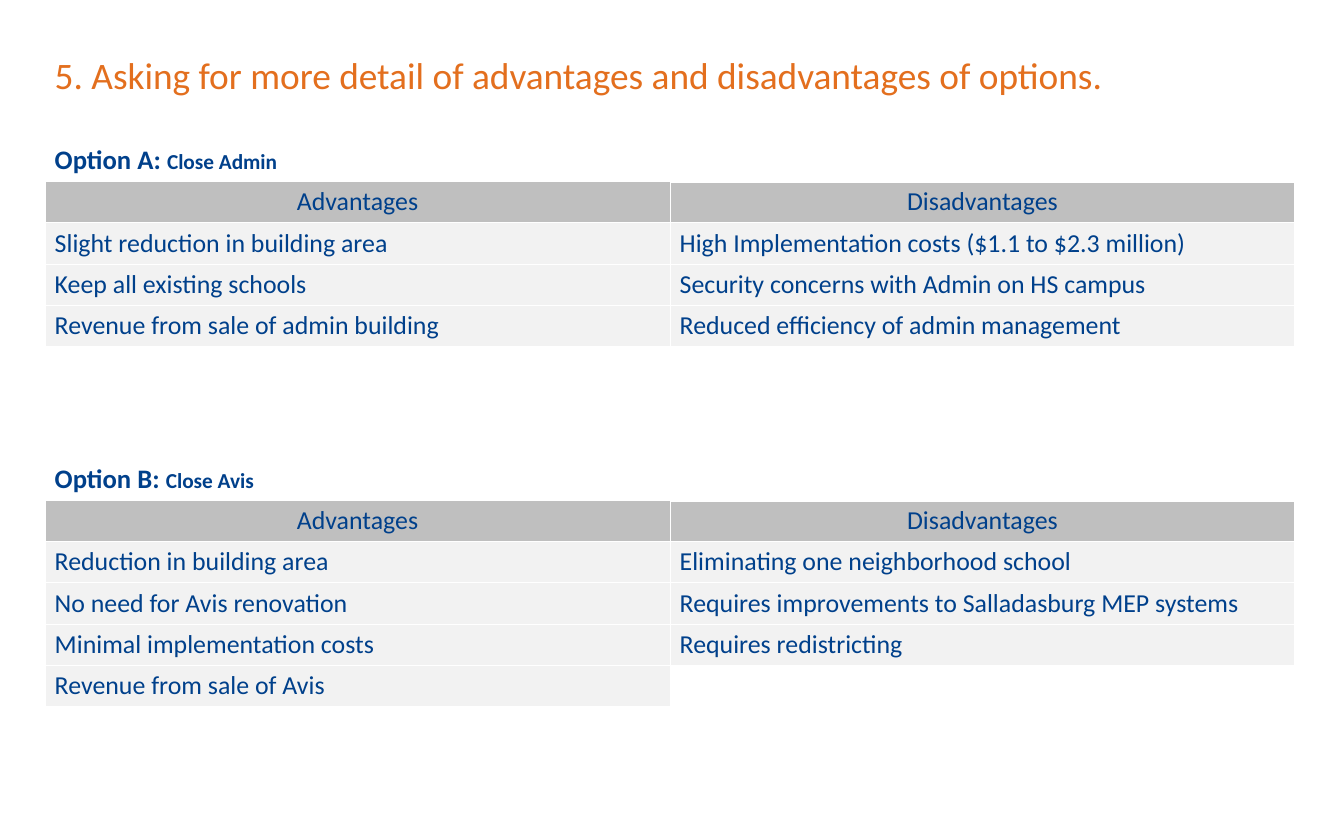
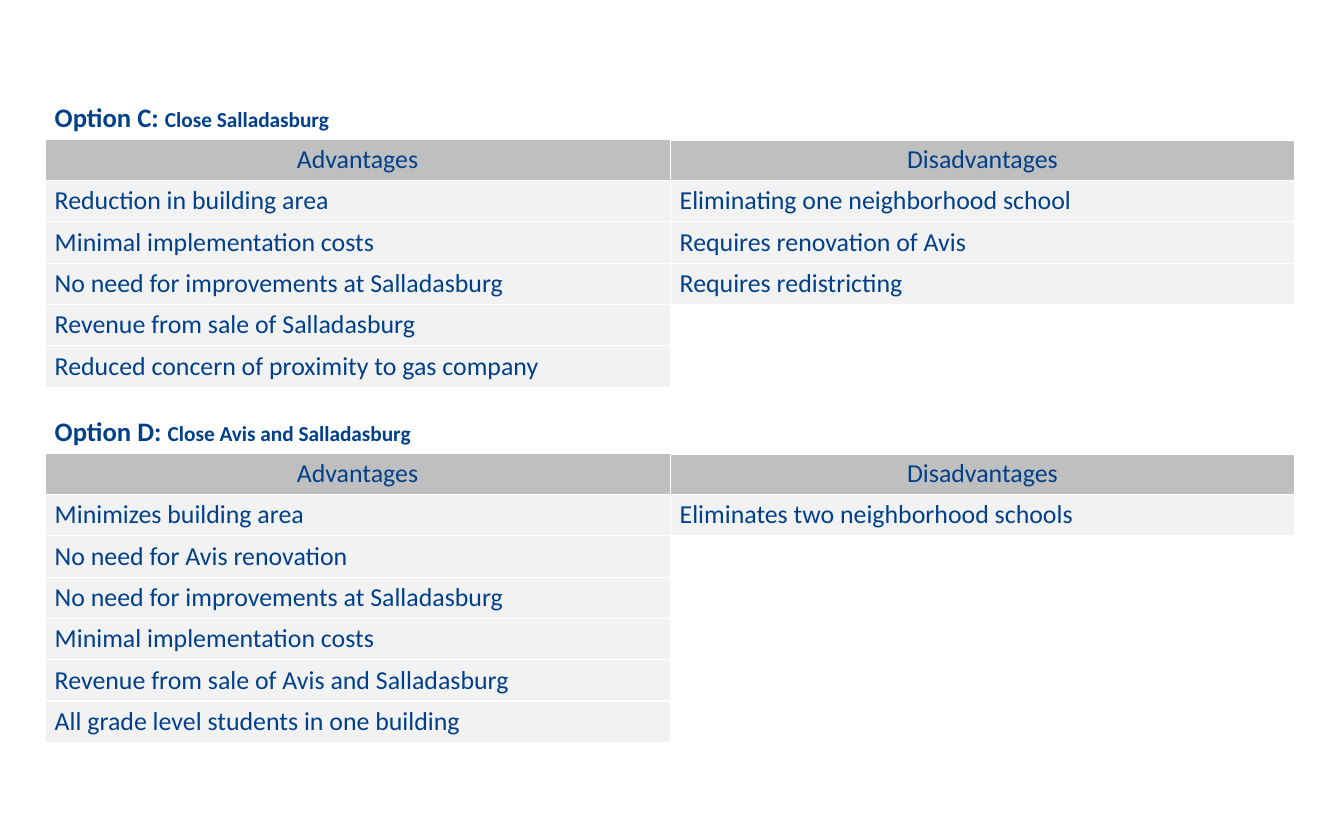
"""Build two slides of tables weighing the advantages and disadvantages of four options."""
from itertools import zip_longest

from lxml.etree import SubElement
from pptx import Presentation
from pptx.dml.color import RGBColor
from pptx.enum.text import MSO_ANCHOR, MSO_AUTO_SIZE, PP_ALIGN
from pptx.oxml.ns import qn
from pptx.util import Inches, Pt

ORANGE = RGBColor(0xE3, 0x6F, 0x1E)
BLUE = RGBColor(0x00, 0x40, 0x8B)
GRAY = RGBColor(0xBF, 0xBF, 0xBF)
PALE = RGBColor(0xF2, 0xF2, 0xF2)
WHITE = RGBColor(0xFF, 0xFF, 0xFF)
FONT = "Calibri"
LEFT, COL, ROW = 0.47, 6.51, 0.41
HEADS = ("Advantages", "Disadvantages")

SLIDES = [
    ("5. Asking for more detail of advantages and disadvantages of options.", [
        (1.45, "Option A: ", "Close Admin",
         ["Slight reduction in building area",
          "Keep all existing schools",
          "Revenue from sale of admin building"],
         ["High Implementation costs ($1.1 to $2.3 million)",
          "Security concerns with Admin on HS campus",
          "Reduced efficiency of admin management"]),
        (4.77, "Option B: ", "Close Avis",
         ["Reduction in building area",
          "No need for Avis renovation",
          "Minimal implementation costs",
          "Revenue from sale of Avis"],
         ["Eliminating one neighborhood school",
          "Requires improvements to Salladasburg MEP systems",
          "Requires redistricting"]),
    ]),
    (None, [
        (4.28, "Option D: ", "Close Avis and Salladasburg",
         ["Minimizes building area",
          "No need for Avis renovation",
          "No need for improvements at Salladasburg",
          "Minimal implementation costs",
          "Revenue from sale of Avis and Salladasburg",
          "All grade level students in one building"],
         ["Eliminates two neighborhood schools"]),
        (1.01, "Option C: ", "Close Salladasburg",
         ["Reduction in building area",
          "Minimal implementation costs",
          "No need for improvements at Salladasburg",
          "Revenue from sale of Salladasburg",
          "Reduced concern of proximity to gas company"],
         ["Eliminating one neighborhood school",
          "Requires renovation of Avis",
          "Requires redistricting"]),
    ]),
]


def style(font, size, color, bold=False):
    font.name = FONT
    font.size = Pt(size)
    font.color.rgb = color
    font.bold = bold


def border(cell, thick):
    props = cell._tc.get_or_add_tcPr()
    for side in ("lnL", "lnR", "lnT", "lnB"):
        width = Pt(3 if side == thick else 1)
        line = SubElement(props, qn(f"a:{side}"), w=str(width))
        fill = SubElement(line, qn("a:solidFill"))
        SubElement(fill, qn("a:srgbClr"), val=str(WHITE))


deck = Presentation()
deck.slide_width, deck.slide_height = Inches(14), Inches(8.5)

for heading, options in SLIDES:
    slide = deck.slides.add_slide(deck.slide_layouts[5 if heading else 6])
    if heading:
        title = slide.shapes.title
        title.left, title.top = Inches(LEFT), Inches(0.49)
        title.width, title.height = Inches(11.82), Inches(0.84)
        frame = title.text_frame
        frame.text = heading
        frame.word_wrap = True
        frame.auto_size = MSO_AUTO_SIZE.NONE
        frame.vertical_anchor = MSO_ANCHOR.TOP
        frame.paragraphs[0].alignment = PP_ALIGN.LEFT
        style(frame.paragraphs[0].runs[0].font, 28, ORANGE)

    for top, label, action, pros, cons in options:
        lines = [(None, None), HEADS, *zip_longest(pros, cons)]
        table = slide.shapes.add_table(
            len(lines), 2, Inches(LEFT), Inches(top),
            Inches(2 * COL), Inches(ROW * len(lines))).table
        for column in table.columns:
            column.width = Inches(COL)
        for r, line in enumerate(lines):
            table.rows[r].height = Inches(ROW)
            for c, words in enumerate(line):
                cell = table.cell(r, c)
                border(cell, {(0, 1): "lnB", (1, 1): "lnT"}.get((r, c)))
                if not words:
                    cell.fill.background()
                    continue
                cell.fill.solid()
                cell.fill.fore_color.rgb = GRAY if r == 1 else PALE
                cell.text_frame.text = words
                para = cell.text_frame.paragraphs[0]
                para.alignment = PP_ALIGN.CENTER if r == 1 else PP_ALIGN.LEFT
                style(para.runs[0].font, 19.4, BLUE)
        para = table.cell(0, 0).text_frame.paragraphs[0]
        for words, size in ((label, 20), (action, 16)):
            run = para.add_run()
            run.text = words
            style(run.font, size, BLUE, True)

deck.save("out.pptx")
